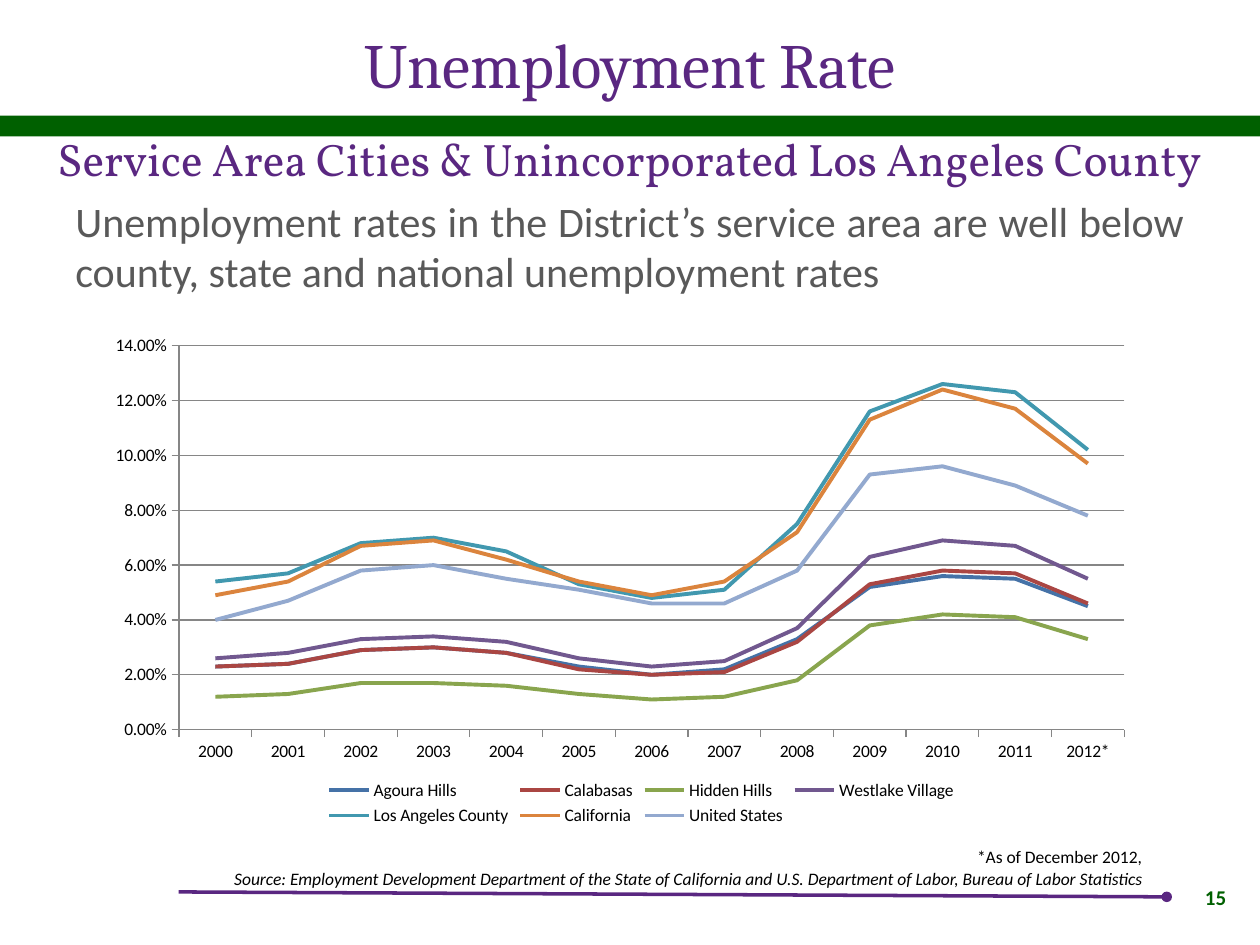
"""Build the unemployment rate slide with its line chart."""
from lxml.etree import SubElement as Sub
from pptx import Presentation
from pptx.chart.data import CategoryChartData as Data
from pptx.dml.color import RGBColor as Rgb
from pptx.enum.chart import XL_CHART_TYPE as Kind, XL_LEGEND_POSITION as Spot, XL_TICK_MARK as Tick
from pptx.enum.shapes import MSO_CONNECTOR as Link, MSO_SHAPE as Form
from pptx.enum.text import MSO_ANCHOR as Anchor, PP_ALIGN as Align
from pptx.oxml.ns import qn
from pptx.util import Cm, Pt

GREEN, PURPLE, GREY, BLACK, RULE = "006000", "5A2781", "595959", "000000", "868686"
MID, TOP = Anchor.MIDDLE, Anchor.TOP

TEXTS = [
    ((1.27, 0.43, 22.86, 1.7), ["Unemployment Rate"], 36, "Cambria", PURPLE, Align.CENTER, MID),
    ((0.43, 2.34, 24.55, 1.7), ["Service Area Cities & Unincorporated Los Angeles County"],
     26, "Vollkorn", PURPLE, Align.CENTER, MID),
    ((1.27, 3.81, 22.86, 2.4),
     ["Unemployment rates in the District’s service area are well below county, "
      "state and national unemployment rates"], 24, "Calibri", GREY, Align.JUSTIFY, TOP),
    ((2.11, 16.94, 21.16, 1.14),
     ["*As of December 2012,",
      "Source: Employment Development Department of the State of California and "
      "U.S. Department of Labor, Bureau of Labor Statistics"],
     10, "Calibri", BLACK, Align.RIGHT, TOP),
    ((23.7, 17.58, 1.27, 1.02), ["15"], 12, "Calibri", GREEN, Align.RIGHT, MID),
]
YEARS = [str(year) for year in range(2000, 2012)] + ["2012*"]
RATES = [
    ("Agoura Hills", "4572A7", [2.3, 2.4, 2.9, 3, 2.8, 2.3, 2, 2.2, 3.3, 5.2, 5.6, 5.5, 4.5]),
    ("Calabasas", "AA4643", [2.3, 2.4, 2.9, 3, 2.8, 2.2, 2, 2.1, 3.2, 5.3, 5.8, 5.7, 4.6]),
    ("Hidden Hills", "89A54E", [1.2, 1.3, 1.7, 1.7, 1.6, 1.3, 1.1, 1.2, 1.8, 3.8, 4.2, 4.1, 3.3]),
    ("Westlake Village", "71588F",
     [2.6, 2.8, 3.3, 3.4, 3.2, 2.6, 2.3, 2.5, 3.7, 6.3, 6.9, 6.7, 5.5]),
    ("Los Angeles County", "4198AF",
     [5.4, 5.7, 6.8, 7, 6.5, 5.3, 4.8, 5.1, 7.5, 11.6, 12.6, 12.3, 10.2]),
    ("California", "DB843D",
     [4.9, 5.4, 6.7, 6.9, 6.2, 5.4, 4.9, 5.4, 7.2, 11.3, 12.4, 11.7, 9.7]),
    ("United States", "93A9CF",
     [4, 4.7, 5.8, 6, 5.5, 5.1, 4.6, 4.6, 5.8, 9.3, 9.6, 8.9, 7.8]),
]


def tint(code):
    return Rgb.from_string(code)


def stroke(line, code, width):
    line.color.rgb = tint(code)
    line.width = Pt(width)


def write(slide, box, lines, size, face, code, align, anchor):
    frame = slide.shapes.add_textbox(*map(Cm, box)).text_frame
    frame.word_wrap = True
    frame.vertical_anchor = anchor
    frame.text = "\n".join(lines)
    for para in frame.paragraphs:
        para.alignment = align
        for run in para.runs:
            run.font.size, run.font.name = Pt(size), face
            run.font.color.rgb = tint(code)
    return frame


def place(node, index, area, inner=False):
    for old in node.findall(qn("c:layout")):
        node.remove(old)
    layout = Sub(node, qn("c:layout"))
    node.insert(index, layout)
    manual = Sub(layout, qn("c:manualLayout"))
    marks = [("layoutTarget", "inner")] if inner else []
    marks += [("xMode", "edge"), ("yMode", "edge"), *zip("xywh", area)]
    for tag, val in marks:
        Sub(manual, qn("c:" + tag)).set("val", str(val))


def plot(slide):
    data = Data(number_format="0.00%")
    data.categories = YEARS
    for name, _, vals in RATES:
        data.add_series(name, [round(val / 100, 3) for val in vals])
    box = map(Cm, (2.33, 6.56, 20.75, 10.19))
    chart = slide.shapes.add_chart(Kind.LINE, *box, data).chart
    chart.has_title = False
    chart.font.size, chart.font.name = Pt(10), "Calibri"
    chart.font.color.rgb = tint(BLACK)
    chart.plots[0].vary_by_categories = False
    for series, (_, code, _) in zip(chart.plots[0].series, RATES):
        series.smooth = False
        stroke(series.format.line, code, 2.25)
    for axis in (chart.category_axis, chart.value_axis):
        axis.major_tick_mark, axis.minor_tick_mark = Tick.OUTSIDE, Tick.NONE
        stroke(axis.format.line, RULE, 0.75)
    axis.minimum_scale, axis.maximum_scale, axis.major_unit = 0, 0.14, 0.02
    axis.tick_labels.number_format = "0.00%"
    axis.tick_labels.number_format_is_linked = False
    axis.has_major_gridlines = True
    stroke(axis.major_gridlines.format.line, RULE, 0.75)
    chart.has_legend = True
    legend = chart.legend
    legend.position, legend.include_in_layout = Spot.BOTTOM, False
    area = chart.element.find(".//" + qn("c:plotArea"))
    place(area, 0, (0.06, 0.04, 0.92, 0.76), True)
    node = chart.element.find(".//" + qn("c:legend"))
    place(node, 1, (0.2, 0.89, 0.62, 0.11))


def main():
    deck = Presentation()
    deck.slide_width, deck.slide_height = Cm(25.4), Cm(19.05)
    slide = deck.slides.add_slide(deck.slide_layouts[6])
    band = slide.shapes.add_shape(Form.RECTANGLE, *map(Cm, (0, 2.33, 25.4, 0.42)))
    band.shadow.inherit = False
    band.fill.solid()
    band.fill.fore_color.rgb = tint(GREEN)
    band.line.fill.background()
    ends = map(Cm, (3.6, 17.98, 23.52, 18.08))
    rule = slide.shapes.add_connector(Link.STRAIGHT, *ends)
    stroke(rule.line, PURPLE, 2)
    props = rule.element.spPr
    Sub(props.find(qn("a:ln")), qn("a:tailEnd")).set("type", "oval")
    Sub(props, qn("a:effectLst"))
    plot(slide)
    frames = [write(slide, *text) for text in TEXTS]
    *_, note, page = frames
    note.paragraphs[1].runs[0].font.italic = True
    page.paragraphs[0].runs[0].font.bold = True
    deck.save("out.pptx")


if __name__ == "__main__":
    main()
